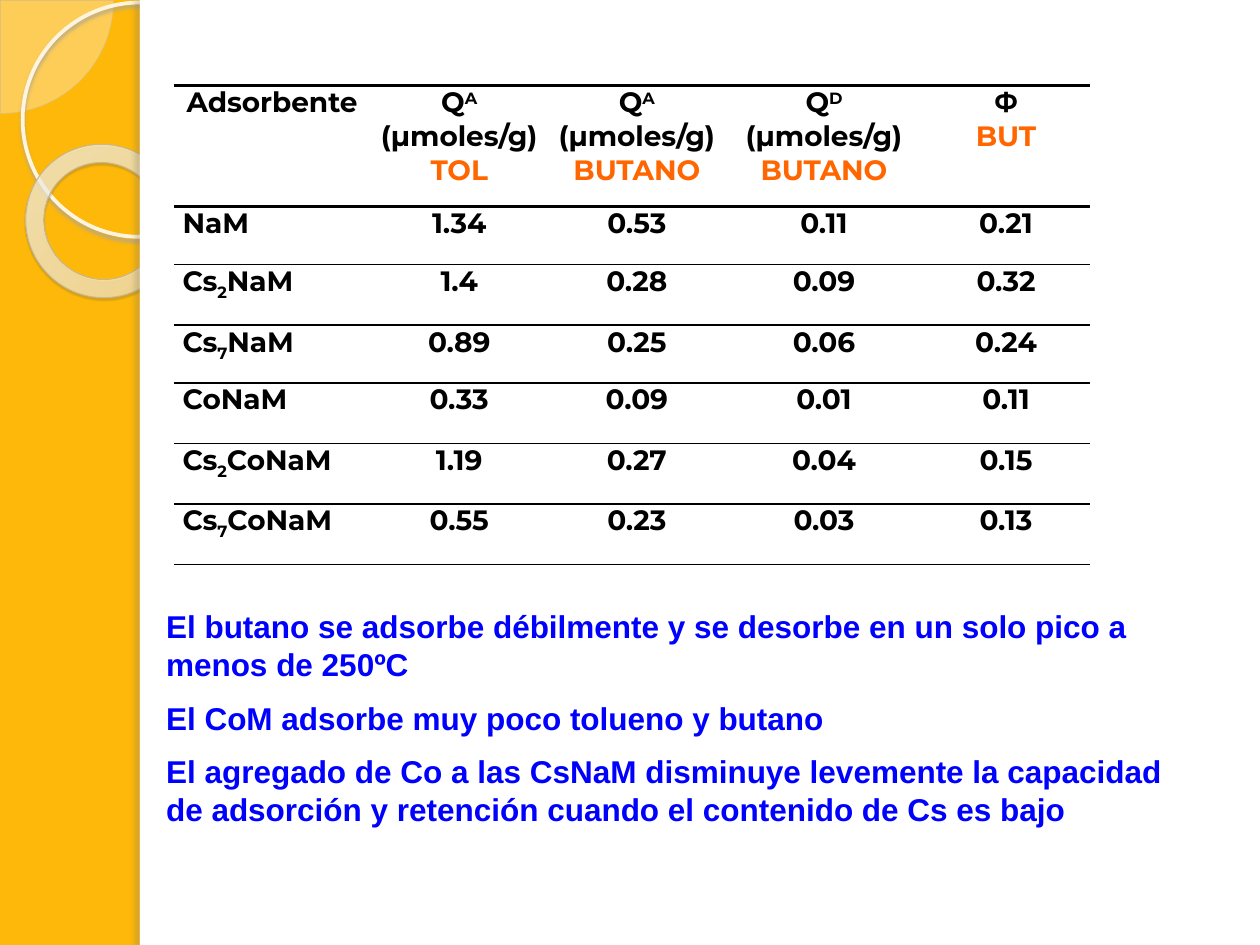
import pptx
import pptx.util
import pptx.dml.color
import pptx.enum.shapes
import pptx.enum.text
import pptx.oxml
import pptx.oxml.ns

COLORS = {
    "gold": "FEB80A", "white": "FFFFFF", "black": "000000",
    "orange": "FF6600", "blue": "0000FF",
    "pie": "FEFAF4", "pie_line": "D3C39F",
    "ring": "FFF5DE", "ring_shadow": "B0A68F",
    "donut_line": "C7B893", "donut_shadow": "5A5444", "strip_shadow": "736F63",
    "donut_in": "FFFCF6", "donut_mid": "FFFEFB", "donut_out": "F0D28E",
}
WIDTH, HEIGHT = pptx.util.Inches(10), pptx.util.Inches(7.5)
SHAPE = pptx.enum.shapes.MSO_SHAPE
ALIGN = pptx.enum.text.PP_ALIGN
HEADERS = [
    "Adsorbente",
    "Q|^A| (μmoles/g)\n*TOL",
    "Q|^A\n(μmoles/g)\n*BUTANO",
    "Q|^D\n(μmoles/g)\n*BUTANO",
    "Φ\n*BUT",
]
ROWS = [
    ["NaM", "1.34", "0.53", "0.11", "0.21"],
    ["Cs|_2|NaM", "1.4", "0.28", "0.09", "0.32"],
    ["Cs|_7|NaM", "0.89", "0.25", "0.06", "0.24"],
    ["CoNaM", "0.33", "0.09", "0.01", "0.11"],
    ["Cs|_2|CoNaM", "1.19", "0.27", "0.04", "0.15"],
    ["Cs|_7|CoNaM", "0.55", "0.23", "0.03", "0.13"],
]
COL_SHARES = [15.6, 14.1, 14.1, 15.6, 13.3]
ROW_SHARES = [12.8, 6.13, 6.4, 6.13, 6.4, 6.4, 6.4]
CONCLUSIONS = [
    "El butano se adsorbe débilmente y se desorbe en un solo pico a menos de 250ºC",
    "El CoM adsorbe muy poco tolueno y butano",
    "El agregado de Co a las CsNaM disminuye levemente la capacidad de adsorción "
    "y retención cuando el contenido de Cs es bajo",
]
BASELINES = {"^": "30000", "_": "-25000"}


def rgb(name):
    return pptx.dml.color.RGBColor.from_string(COLORS[name])


def across(share):
    return round(WIDTH * share / 100)


def down(share):
    return round(HEIGHT * share / 100)


def box(x, y, w, h):
    return across(x), down(y), across(w), down(h)


def xml(tag, body="", attrs=""):
    ns = pptx.oxml.ns.nsdecls("a")
    return pptx.oxml.parse_xml(f"<a:{tag} {ns} {attrs}>{body}</a:{tag}>")


def color_xml(name, alpha=100):
    return (f'<a:srgbClr val="{COLORS[name]}">'
            f'<a:alpha val="{alpha * 1000}"/></a:srgbClr>')


def add_shape(slide, kind, place, fill=None, line=None, width=0):
    sp = slide.shapes.add_shape(kind, *box(*place))
    sp.shadow.inherit = False
    if fill:
        sp.fill.solid()
        sp.fill.fore_color.rgb = rgb(fill)
    else:
        sp.fill.background()
    if line:
        sp.line.color.rgb = rgb(line)
        sp.line.width = pptx.util.Pt(width)
    else:
        sp.line.fill.background()
    return sp


def add_shadow(sp, name, alpha, blur, dist, angle):
    attrs = (f'blurRad="{pptx.util.Pt(blur)}" dist="{pptx.util.Pt(dist)}" '
             f'dir="{angle * 60000}" algn="tl" rotWithShape="0"')
    effects = sp.element.spPr.find(pptx.oxml.ns.qn("a:effectLst"))
    effects.append(xml("outerShdw", color_xml(name, alpha), attrs))


def set_alpha(sp, alpha):
    clr = sp.element.spPr.find(".//" + pptx.oxml.ns.qn("a:srgbClr"))
    clr.append(xml("alpha", attrs=f'val="{alpha * 1000}"'))


def set_radial_fill(sp, stops):
    gs = "".join(f'<a:gs pos="{pos * 1000}">{color_xml(name, alpha)}</a:gs>'
                 for pos, name, alpha in stops)
    path = ('<a:path path="circle"><a:fillToRect l="-408000" t="-50000" '
            'r="508000" b="150000"/></a:path>')
    spPr = sp.element.spPr
    spPr.replace(spPr.find(pptx.oxml.ns.qn("a:noFill")),
                 xml("gradFill", f"<a:gsLst>{gs}</a:gsLst>{path}"))


def add_side_decoration(slide):
    pie = add_shape(slide, SHAPE.PIE, (-8.9, -11.87, 17.9, 23.87),
                    "pie", "pie_line", 0.25)
    pie.adjustments[0], pie.adjustments[1] = 0, 54.02
    set_alpha(pie, 33)
    ring = add_shape(slide, SHAPE.OVAL, (1.8, 0.27, 18.6, 24.8),
                     None, "ring", 2.15)
    add_shadow(ring, "ring_shadow", 85, 2, 2, 90)
    donut = add_shape(slide, SHAPE.DONUT, (2, 15.33, 12.3, 16.13),
                      None, "donut_line", 0.58)
    donut.adjustments[0] = 0.12
    donut.rotation = 38.6
    set_radial_fill(donut, [(0, "donut_in", 70), (70, "donut_mid", 55),
                            (100, "donut_out", 60)])
    add_shadow(donut, "donut_shadow", 35, 1, 1.2, 75)
    add_shape(slide, SHAPE.RECTANGLE, (11.1, 0, 88.9, 100), "white")
    strip = add_shape(slide, SHAPE.RECTANGLE, (11.1, 0, 0.8, 100), "white")
    add_shadow(strip, "strip_shadow", 25, 3, 3, 180)


def style_run(r, font, size, color):
    r.font.name = font
    r.font.size = pptx.util.Pt(size)
    r.font.bold = True
    r.font.color.rgb = rgb(color)


def write_cell(cell, text, align):
    tf = cell.text_frame
    lines = text.split("\n")
    tf.text = "\n".join(lines[:1] + [""] * (len(lines) - 1))
    tf.text = "\n".join("" for _ in lines)
    for p, line in zip(tf.paragraphs, lines):
        p.alignment = align
        color = "orange" if line.startswith("*") else "black"
        for part in line.lstrip("*").split("|"):
            r = p.add_run()
            r.text = part.lstrip("^_")
            style_run(r, "Montserrat", 16, color)
            if part[0] in BASELINES:
                r.font._element.set("baseline", BASELINES[part[0]])


def set_borders(cell, top, bottom):
    tcPr = cell._tc.get_or_add_tcPr()
    for side in ("lnL", "lnR"):
        tcPr.append(xml(side, "<a:noFill/>"))
    for side, width in (("lnT", top), ("lnB", bottom)):
        tcPr.append(xml(side, f"<a:solidFill>{color_xml('black')}</a:solidFill>",
                        f'w="{pptx.util.Pt(width)}"'))


def add_results_table(slide):
    data = [HEADERS] + ROWS
    place = box(13.8, 9.07, sum(COL_SHARES), sum(ROW_SHARES))
    table = slide.shapes.add_table(len(data), len(HEADERS), *place).table
    table.first_row = table.horz_banding = False
    for col, share in zip(table.columns, COL_SHARES):
        col.width = across(share)
    for row, share in zip(table.rows, ROW_SHARES):
        row.height = down(share)
    for i, values in enumerate(data):
        for j, text in enumerate(values):
            cell = table.cell(i, j)
            cell.margin_left = cell.margin_right = pptx.util.Inches(0.07)
            cell.margin_top = cell.margin_bottom = 0
            align = ALIGN.JUSTIFY if i and not j else ALIGN.CENTER
            write_cell(cell, text, align)
            set_borders(cell, 2.25 if i < 2 else 1, 1 if i else 2.25)
            cell.fill.background()


def add_conclusions(slide):
    tf = slide.shapes.add_textbox(*box(12.2, 63.6, 82.7, 25.33)).text_frame
    tf.word_wrap = True
    tf.auto_size = pptx.enum.text.MSO_AUTO_SIZE.SHAPE_TO_FIT_TEXT
    tf.text = "\n".join(CONCLUSIONS)
    for p in tf.paragraphs:
        p.space_before = pptx.util.Pt(9)
        style_run(p.runs[0], "Arial", 18, "blue")


def main():
    prs = pptx.Presentation()
    prs.slide_width, prs.slide_height = WIDTH, HEIGHT
    slide = prs.slides.add_slide(prs.slide_layouts[6])
    slide.background.fill.solid()
    slide.background.fill.fore_color.rgb = rgb("gold")
    add_side_decoration(slide)
    add_results_table(slide)
    add_conclusions(slide)
    prs.save("out.pptx")


if __name__ == "__main__":
    main()
